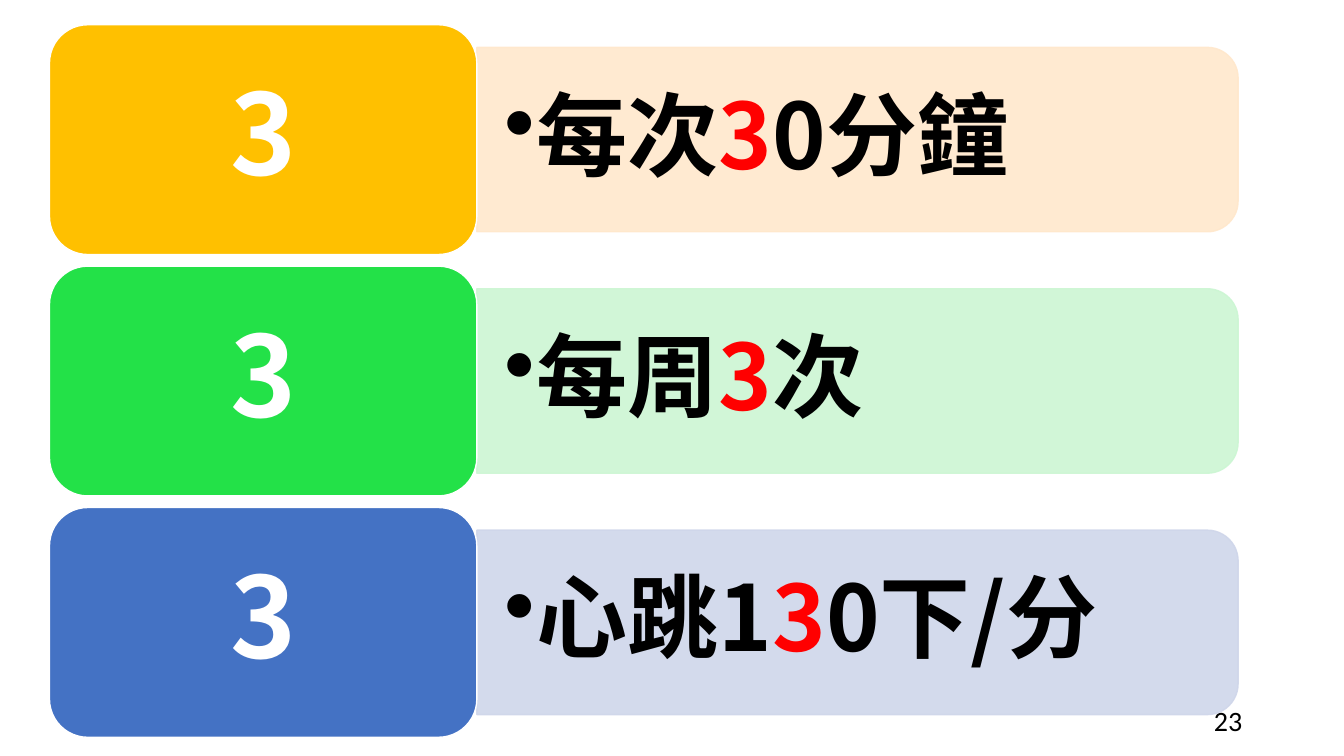
from lxml import etree
from pptx import Presentation
from pptx.dml.color import RGBColor
from pptx.enum.shapes import MSO_SHAPE
from pptx.enum.text import MSO_ANCHOR, PP_ALIGN
from pptx.oxml.ns import qn
from pptx.util import Inches, Pt

ROUND = MSO_SHAPE.ROUNDED_RECTANGLE
TAB = MSO_SHAPE.ROUND_2_SAME_RECTANGLE
MIDDLE = MSO_ANCHOR.MIDDLE
LEFT, CENTER, RIGHT = PP_ALIGN.LEFT, PP_ALIGN.CENTER, PP_ALIGN.RIGHT

FIRST, PITCH = 18.47, 31.93
ROWS = [
    ("FFC000", "FFE8CC", ("每次", "3", "0分鐘")),
    ("23E148", "CCF6D3", ("每周", "3", "次")),
    ("4472C4", "CFD6EA", ("心跳1", "3", "0下/分")),
]


def color(code):
    return RGBColor.from_string(code)


class Deck:
    font = "Noto Sans CJK SC"
    black, white, red = "000000", "FFFFFF", "FF0000"

    def __init__(self):
        self.prs = Presentation()
        self.prs.slide_width = Inches(13.33)
        self.prs.slide_height = Inches(7.5)
        self.slide = self.prs.slides.add_slide(self.prs.slide_layouts[6])

    def place(self, x, mid, w, h):
        wide, high = self.prs.slide_width, self.prs.slide_height
        return [int(n / 100) for n in
                (x * wide, (mid - h / 2) * high, w * wide, h * high)]

    def paint(self, shape, fill, line):
        shape.shadow.inherit = False
        shape.fill.solid()
        shape.fill.fore_color.rgb = color(fill)
        shape.line.color.rgb = color(line)
        shape.line.width = Pt(1)

    def label(self, shape, parts, size, align, font, pad=(0.1, 0.05),
              bold=False, after=0, bullet=False):
        frame = shape.text_frame
        frame.word_wrap = True
        frame.vertical_anchor = MIDDLE
        frame.margin_left = frame.margin_right = Inches(pad[0])
        frame.margin_top = frame.margin_bottom = Inches(pad[1])
        para = frame.paragraphs[0]
        para.alignment = align
        if after:
            para.line_spacing = 0.9
            props = para._p.get_or_add_pPr()
            gap = etree.SubElement(props, qn("a:spcAft"))
            etree.SubElement(gap, qn("a:spcPct"), val=str(after * 1000))
        if bullet:
            para.level = 1
            props.set("marL", str(Inches(0.31)))
            props.set("indent", str(-Inches(0.31)))
            etree.SubElement(props, qn("a:buChar"), char="•")
        para.font.name = font
        para.font.size = Pt(size)
        para.font.bold = bold
        etree.SubElement(para.font._element, qn("a:ea"), typeface=font)
        for text, tint in parts:
            run = para.add_run()
            run.text = text
            run.font.color.rgb = color(tint)

    def text(self, area, parts, size, align, font, **style):
        box = self.slide.shapes.add_textbox(*self.place(*area))
        self.label(box, parts, size, align, font, **style)

    def band(self, area, fill):
        x, y, w, h = self.place(*area)
        shape = self.slide.shapes.add_shape(
            TAB, x + (w - h) // 2, y + (h - w) // 2, h, w)
        shape.rotation = 90
        self.paint(shape, fill, fill)
        for tint in shape._element.spPr.iter(qn("a:srgbClr")):
            etree.SubElement(tint, qn("a:alpha"), val="90000")

    def card(self, area, fill, digit):
        shape = self.slide.shapes.add_shape(ROUND, *self.place(*area))
        self.paint(shape, fill, self.white)
        self.label(shape, [(digit, self.white)], 80, CENTER, self.font,
                   pad=(0.44, 0.28), bold=True, after=35)

    def row(self, mid, strong, pale, words):
        self.band((35.48, mid, 56.64, 24.4), pale)
        parts = zip(words, (self.black, self.red, self.black))
        self.text((35.48, mid, 55.96, 22), parts, 65, LEFT, self.font,
                  pad=(0.27, 0.14), bold=True, after=15, bullet=True)
        self.card((3.68, mid, 31.8, 30.4), strong, "3")


def main():
    deck = Deck()
    deck.text((70.67, 95.33, 22.5, 5.33), [("23", deck.black)],
              20, RIGHT, "Calibri")
    for i, (strong, pale, words) in enumerate(ROWS):
        deck.row(FIRST + i * PITCH, strong, pale, words)
    deck.prs.save("out.pptx")


if __name__ == "__main__":
    main()
